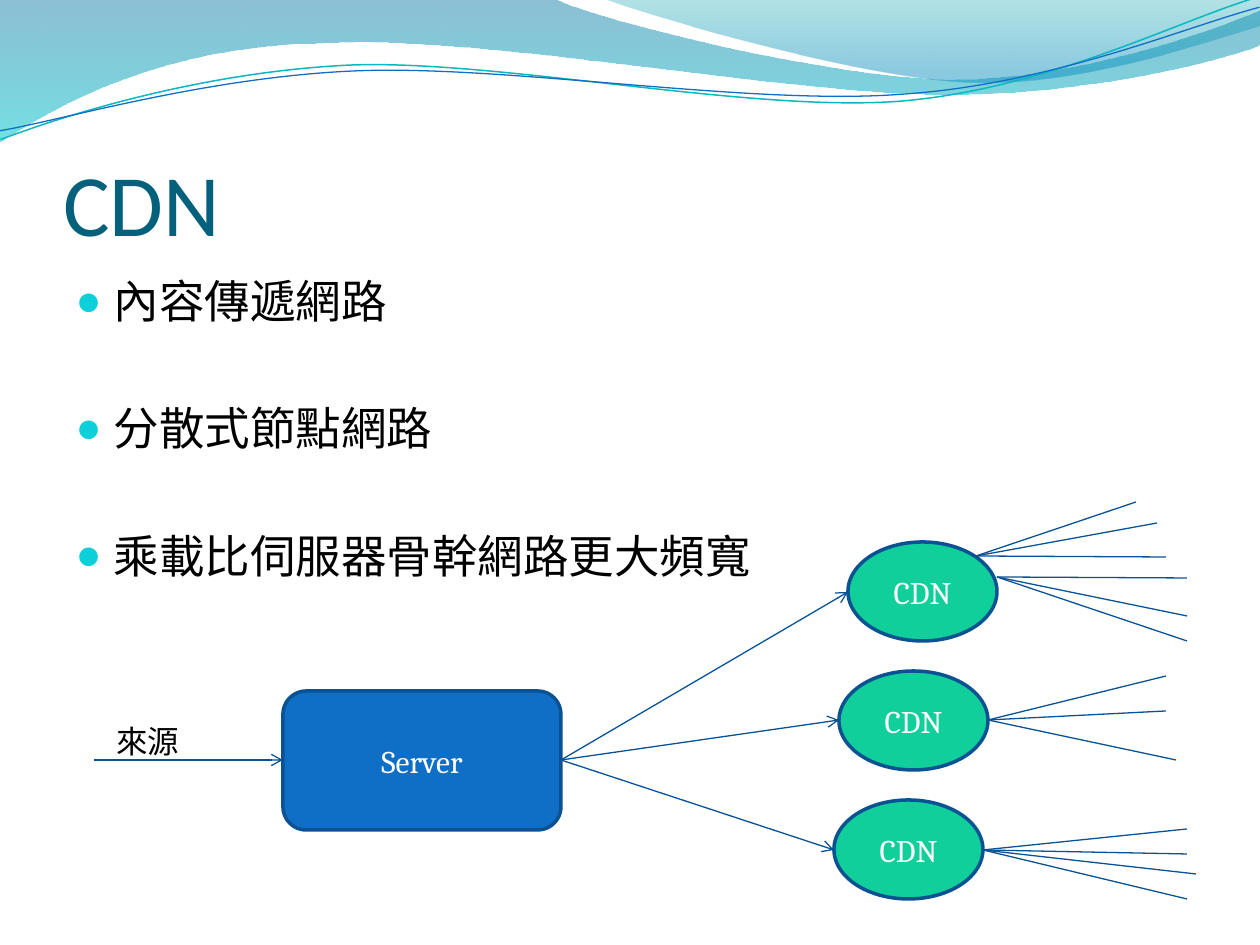
from dataclasses import dataclass

from lxml import etree
from pptx import Presentation
from pptx.dml.color import RGBColor
from pptx.enum.shapes import MSO_CONNECTOR, MSO_SHAPE
from pptx.enum.text import MSO_ANCHOR, MSO_AUTO_SIZE, PP_ALIGN
from pptx.oxml.ns import qn
from pptx.util import Emu, Pt

STRAIGHT = MSO_CONNECTOR.STRAIGHT
ROUNDED, ELLIPSE = MSO_SHAPE.ROUNDED_RECTANGLE, MSO_SHAPE.OVAL
LEFT, CENTER = PP_ALIGN.LEFT, PP_ALIGN.CENTER
TOP, MIDDLE, BOTTOM = MSO_ANCHOR.TOP, MSO_ANCHOR.MIDDLE, MSO_ANCHOR.BOTTOM
NO_AUTOFIT = MSO_AUTO_SIZE.NONE

PX_PER_INCH = 126
EMU_PER_PX = 914400 / PX_PER_INCH


@dataclass(frozen=True)
class Theme:
    heading_font: str = "Calibri"
    body_font: str = "Cambria"
    title: str = "04617B"
    text: str = "000000"
    inverse: str = "FFFFFF"
    bullet: str = "0BD0D9"
    server: str = "0F6FC6"
    node: str = "10CF9B"
    outline: str = "0B5292"
    link: str = "095295"
    teal_line: str = "0AB8BF"
    blue_line: str = "0F6FC6"
    title_size: int = 50
    body_size: int = 26
    label_size: int = 18


THEME = Theme()

BULLETS = ["內容傳遞網路", "分散式節點網路", "乘載比伺服器骨幹網路更大頻寬"]

# A wave segment of two numbers is a straight line, one of six a Bézier curve.
# Filled waves: start, segments, gradient stops (position, colour, opacity %).
FILLED_WAVES = [
    ((0, 0),
     [(554, -1), (600, 21, 837, 79, 955, 79), (1075, 79, 1207, 33, 1260, 11),
      (1261, 45), (1239, 55, 1096, 96, 940, 94), (784, 94, 481, 35, 324, 43),
      (163, 45, 58, 105, -1, 142), (0, 0)],
     [(0, "0074A1", 45), (1, "00C6CF", 55)]),
    ((604, -1),
     [(641, 14, 859, 78, 969, 82), (1079, 87, 1211, 40, 1260, 26), (1260, 0),
      (604, -1)],
     [(0, "00A1A9", 30), (0.8, "008BBF", 45)]),
]
# Line waves, before their tilt: start, segments, colour, width in points.
LINE_WAVES = [
    ((-2, 110),
     [(59, 90, 199, 52, 350, 52), (498, 53, 745, 118, 897, 114),
      (1048, 109, 1184, 45, 1260, 27)], THEME.teal_line, 0.85),
    ((-2, 101),
     [(58, 94, 207, 57, 357, 58), (508, 59, 751, 112, 902, 107),
      (1052, 104, 1187, 53, 1262, 37)], THEME.blue_line, 0.75),
]
LINE_TILT = -2.7

NODE_WIDTH, NODE_HEIGHT = 149, 99
# Left and top of each node, and the end of the link that reaches it.
NODES = [((848, 542), (848, 592)), ((839, 671), (839, 720)), ((834, 800), (834, 850))]
# Lines to the clients: shared start, ends.
CLIENT_FANS = [
    ((976, 556), [(1136, 502), (1166, 557), (1157, 523)]),
    ((997, 577), [(1187, 616), (1187, 578), (1187, 641)]),
    ((988, 720), [(1166, 711), (1176, 760), (1166, 676)]),
    ((983, 850), [(1187, 829), (1187, 854), (1196, 874), (1187, 899)]),
]


def px(*lengths):
    return [Emu(round(length * EMU_PER_PX)) for length in lengths]


def rgb(colour):
    return RGBColor.from_string(colour)


def format_text(frame, size, colour, font=THEME.body_font, align=LEFT, anchor=TOP):
    frame.word_wrap = True
    frame.auto_size = NO_AUTOFIT
    frame.vertical_anchor = anchor
    for paragraph in frame.paragraphs:
        paragraph.alignment = align
        for run in paragraph.runs:
            run.font.size = Pt(size)
            run.font.name = font
            run.font.color.rgb = rgb(colour)


def add_wave(slide, start, segments, close):
    """Build the outline through all points, then bend the six-number segments."""
    points = [segment[i:i + 2] for segment in segments for i in range(0, len(segment), 2)]
    builder = slide.shapes.build_freeform(*start, scale=EMU_PER_PX)
    builder.add_line_segments(points, close=close)
    wave = builder.convert_to_shape()
    wave.shadow.inherit = False
    vertices = iter(list(wave._element.iter(qn("a:lnTo"))))
    for segment in segments:
        vertex = next(vertices)
        if len(segment) == 6:
            curve = etree.Element(qn("a:cubicBezTo"))
            vertex.addprevious(curve)
            for control in (vertex, next(vertices), next(vertices)):
                curve.append(control[0])
                control.getparent().remove(control)
    return wave


def add_filled_wave(slide, start, segments, stops):
    wave = add_wave(slide, start, segments, close=True)
    wave.fill.gradient()
    wave.fill.gradient_angle = 270
    for stop, (position, colour, _) in zip(wave.fill.gradient_stops, stops):
        stop.position = position
        stop.color.rgb = rgb(colour)
    colours = wave._element.spPr.iter(qn("a:srgbClr"))
    for element, (_, _, opacity) in zip(list(colours), stops):
        etree.SubElement(element, qn("a:alpha"), val=str(opacity * 1000))
    wave.line.fill.background()


def add_line_wave(slide, start, segments, colour, width):
    wave = add_wave(slide, start, segments, close=False)
    wave.rotation = LINE_TILT
    wave.fill.background()
    wave.line.color.rgb = rgb(colour)
    wave.line.width = Pt(width)


def place(slide, placeholder, box):
    """Position a placeholder in front of the waves."""
    placeholder.left, placeholder.top, placeholder.width, placeholder.height = px(*box)
    slide.shapes._spTree.append(placeholder._element)
    return placeholder.text_frame


def fill_title(slide, text):
    frame = place(slide, slide.shapes.title, (63, 97, 1134, 157))
    frame.text = text
    frame.margin_left = frame.margin_right = frame.margin_bottom = 0
    format_text(frame, THEME.title_size, THEME.title, THEME.heading_font, anchor=BOTTOM)


def fill_bullets(slide, items):
    frame = place(slide, slide.placeholders[1], (63, 267, 1134, 605))
    frame.text = "\n".join(items)
    format_text(frame, THEME.body_size, THEME.text)
    indent, = px(38)
    for index, paragraph in enumerate(frame.paragraphs):
        paragraph.space_before = Pt(41.5 if index else 5)
        properties = paragraph._p.get_or_add_pPr()
        properties.set("marL", str(indent))
        properties.set("indent", str(-indent))
        colour = etree.SubElement(properties, qn("a:buClr"))
        etree.SubElement(colour, qn("a:srgbClr"), val=THEME.bullet)
        etree.SubElement(properties, qn("a:buSzPct"), val="95000")
        etree.SubElement(properties, qn("a:buChar"), char="●")


def add_box(slide, preset, box, fill, text):
    shape = slide.shapes.add_shape(preset, *px(*box))
    shape.shadow.inherit = False
    shape.fill.solid()
    shape.fill.fore_color.rgb = rgb(fill)
    shape.line.color.rgb = rgb(THEME.outline)
    shape.line.width = Pt(2)
    shape.text_frame.text = text
    format_text(shape.text_frame, THEME.label_size, THEME.inverse,
                align=CENTER, anchor=MIDDLE)


def add_link(slide, start, end, arrow=False):
    link = slide.shapes.add_connector(STRAIGHT, *px(*start, *end))
    link.line.color.rgb = rgb(THEME.link)
    link.line.width = Pt(0.75)
    if arrow:
        etree.SubElement(link.line._get_or_add_ln(), qn("a:tailEnd"), type="arrow")
    etree.SubElement(link._element.spPr, qn("a:effectLst"))


def add_label(slide, box, text):
    frame = slide.shapes.add_textbox(*px(*box)).text_frame
    frame.text = text
    format_text(frame, THEME.label_size, THEME.text)


def main():
    deck = Presentation()
    deck.slide_width, deck.slide_height = px(1260, 945)
    slide = deck.slides.add_slide(deck.slide_layouts[1])
    for wave in FILLED_WAVES:
        add_filled_wave(slide, *wave)
    for wave in LINE_WAVES:
        add_line_wave(slide, *wave)
    fill_title(slide, "CDN")
    fill_bullets(slide, BULLETS)

    add_box(slide, ROUNDED, (283, 691, 278, 139), THEME.server, "Server")
    add_link(slide, (94, 760), (283, 760), arrow=True)
    for position, link_end in NODES:
        add_box(slide, ELLIPSE, (*position, NODE_WIDTH, NODE_HEIGHT), THEME.node, "CDN")
        add_link(slide, (561, 760), link_end, arrow=True)
    for start, ends in CLIENT_FANS:
        for end in ends:
            add_link(slide, start, end)
    add_label(slide, (104, 716, 100, 50), "來源")
    deck.save("out.pptx")


if __name__ == "__main__":
    main()
